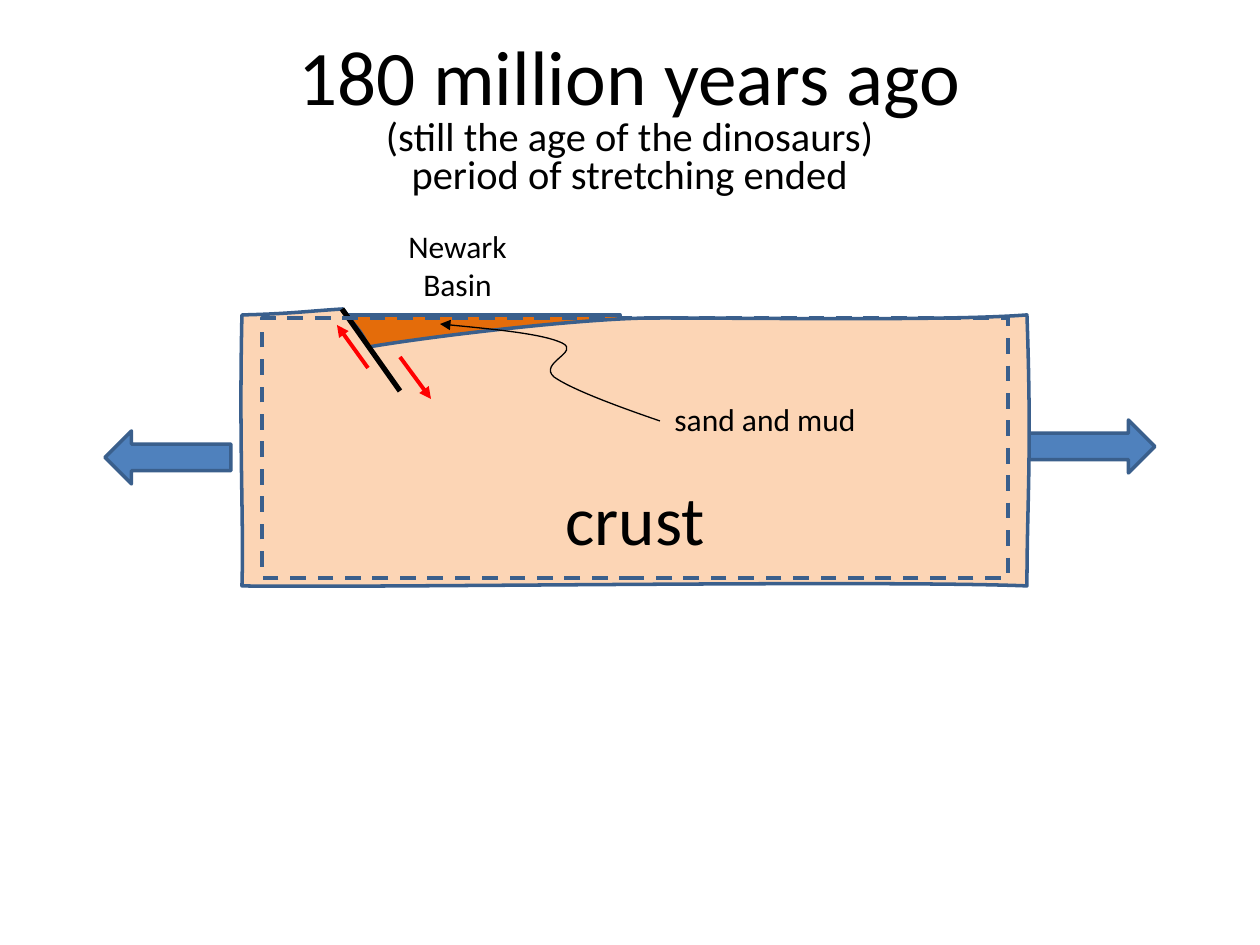
from lxml import etree
from pptx import Presentation, util as u
from pptx.dml.color import RGBColor
from pptx.enum import dml, shapes, text
from pptx.oxml.ns import qn

PX = 914400 / 126
COLORS = {"black": "000000", "red": "FF0000", "blue": "4F81BD", "outline": "3A5F8C",
          "crust": "FCD5B5", "sediment": "E46C0A"}
FONT = "Calibri"

# Content: lengths in px, text sizes in points
TITLE = [("180 million years ago", 44.1),
         ("(still the age of the dinosaurs)", 23.1),
         ("period of stretching ended", 23.1)]
TITLE_BOX = (0, 46, 1260, 178)

SEDIMENT_BOX = (315, 315, 305, 63)
STRETCH_ARROWS = [(shapes.MSO_SHAPE.RIGHT_ARROW, (1029, 420, 126, 53)),
                  (shapes.MSO_SHAPE.LEFT_ARROW, (105, 431, 126, 53))]
BEFORE_BOX = (262, 318, 746, 260)

# Curves: a start point, then two control points and an end point per segment
CRUST = [(343, 309),
         (310, 311), (289, 314), (242, 315),
         (239, 447), (244, 522), (242, 586),
         (374, 588), (878, 580), (1027, 586),
         (1027, 501), (1032, 456), (1027, 315),
         (951, 321), (750, 318), (655, 318),
         (586, 318), (433, 336), (369, 347),
         (358, 326), (360, 333), (343, 309)]
LEADER = [(440, 324),
          (491, 329), (543, 334), (562, 343),
          (581, 352), (538, 363), (554, 377),
          (571, 389), (616, 406), (660, 421)]

FAULT = ((342, 309), (400, 391))
SLIP_ARROWS = [((400, 357), (431, 399)), ((368, 368), (337, 325))]

CRUST_LABEL = ("crust", 39.6, (262, 484, 746, 83))
BASIN_LABEL = ("Newark Basin", 18, (368, 221, 179, 89))
SEDIMENT_LABEL = ("sand and mud", 18, (646, 394, 238, 50))


def emu(*lengths):
    return [round(length * PX) for length in lengths]


def rgb(name):
    return RGBColor.from_string(COLORS[name])


def set_line(item, color, width, arrow_end=None):
    item.line.color.rgb = rgb(color)
    item.line.width = u.Pt(width)
    if arrow_end:
        line = item.line._get_or_add_ln()
        etree.SubElement(line, qn("a:" + arrow_end), type="triangle")


def style(shape, fill, color="outline", width=2, arrow_end=None):
    shape.shadow.inherit = False
    if fill:
        shape.fill.solid()
        shape.fill.fore_color.rgb = rgb(fill)
    else:
        shape.fill.background()
    set_line(shape, color, width, arrow_end)


def add_curve(page, points, closed):
    builder = page.shapes.build_freeform(*points[0], scale=PX)
    builder.add_line_segments(points[1:], close=closed)
    shape = builder.convert_to_shape()
    # Join every three straight steps into one Bezier segment
    steps = list(shape._element.iter(qn("a:lnTo")))
    for first in range(0, len(steps), 3):
        curve = etree.Element(qn("a:cubicBezTo"))
        steps[first].addprevious(curve)
        for step in steps[first:first + 3]:
            curve.append(step[0])
            step.getparent().remove(step)
    return shape


def add_straight(page, start, end, color, width, arrow_end=None):
    line = page.shapes.add_connector(shapes.MSO_CONNECTOR.STRAIGHT, *emu(*start, *end))
    set_line(line, color, width, arrow_end)
    etree.SubElement(line._element.spPr, qn("a:effectLst"))


def format_para(para, size, spacing=None):
    para.alignment = text.PP_ALIGN.CENTER
    para.line_spacing = spacing
    for span in para.runs:
        span.font.name = FONT
        span.font.size = u.Pt(size)
        span.font.color.rgb = rgb("black")


def add_label(page, words, size, place, spacing=None, anchor=text.MSO_ANCHOR.TOP):
    box = page.shapes.add_textbox(*emu(*place))
    frame = box.text_frame
    frame.word_wrap = True
    frame.vertical_anchor = anchor
    frame.text = words
    format_para(frame.paragraphs[0], size, spacing)


def add_title(page):
    title = page.shapes.title
    title.left, title.top, title.width, title.height = emu(*TITLE_BOX)
    frame = title.text_frame
    frame.auto_size = text.MSO_AUTO_SIZE.NONE
    frame.vertical_anchor = text.MSO_ANCHOR.TOP
    frame.margin_top = frame.margin_bottom = 0
    frame.text = "\n".join(words for words, size in TITLE)
    for para, (words, size) in zip(frame.paragraphs, TITLE):
        format_para(para, size, 0.8)


def main():
    deck = Presentation()
    deck.slide_width, deck.slide_height = emu(1260, 945)
    page = deck.slides.add_slide(deck.slide_layouts[5])
    add_title(page)

    # Sediment and the arrows that stretch the crust
    sediment = page.shapes.add_shape(shapes.MSO_SHAPE.RECTANGLE, *emu(*SEDIMENT_BOX))
    style(sediment, "sediment")
    for kind, place in STRETCH_ARROWS:
        style(page.shapes.add_shape(kind, *emu(*place)), "blue")

    # Crust with its fault
    style(add_curve(page, CRUST, closed=True), "crust")
    add_straight(page, *FAULT, "black", 3)
    for start, end in SLIP_ARROWS:
        add_straight(page, start, end, "red", 2.25, "tailEnd")
    add_label(page, *CRUST_LABEL, spacing=0.8, anchor=text.MSO_ANCHOR.MIDDLE)

    # Outline of the crust before stretching
    before = page.shapes.add_shape(shapes.MSO_SHAPE.RECTANGLE, *emu(*BEFORE_BOX))
    style(before, None, width=2.25)
    before.line.dash_style = dml.MSO_LINE.DASH

    # Labels and leader
    add_label(page, *BASIN_LABEL)
    style(add_curve(page, LEADER, closed=False), None, "black", 0.75, "headEnd")
    add_label(page, *SEDIMENT_LABEL)

    deck.save("out.pptx")


if __name__ == "__main__":
    main()
